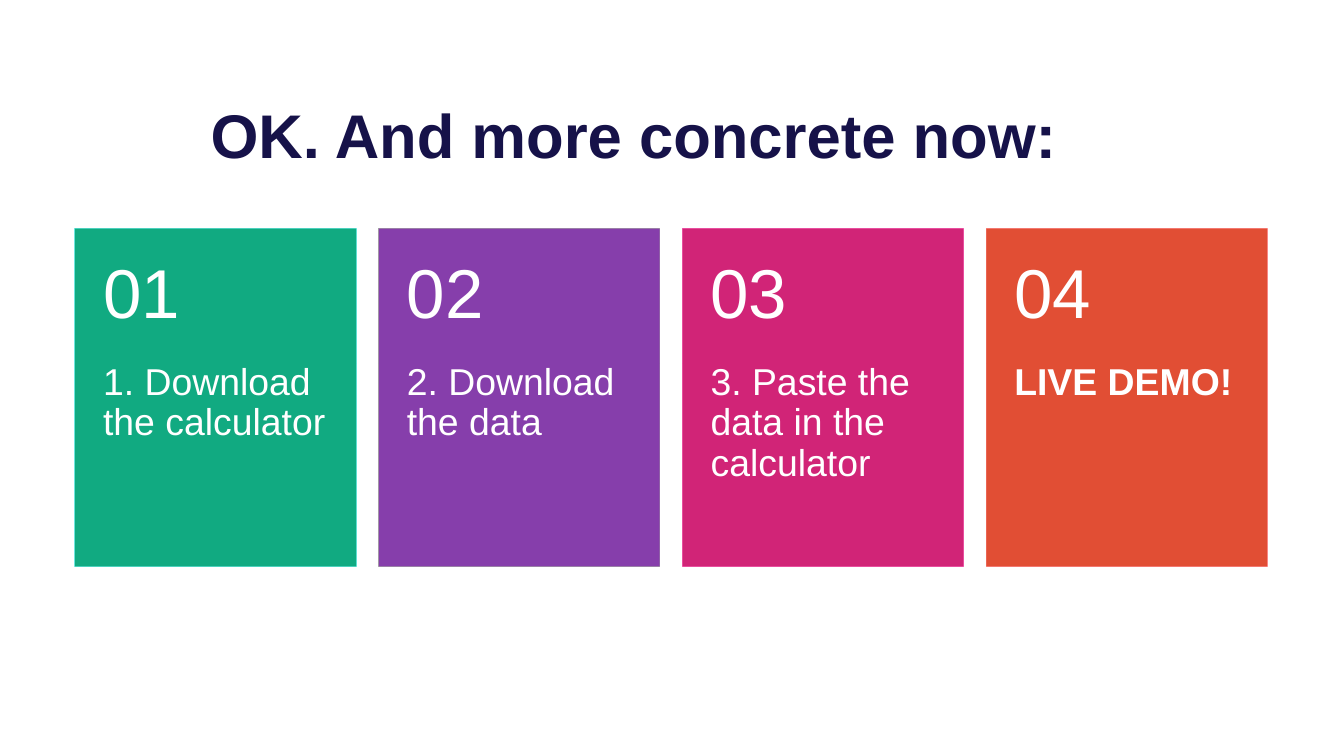
import pptx
import pptx.dml.color
import pptx.enum.shapes
import pptx.enum.text
import pptx.util

Cm = pptx.util.Cm
ANCHOR = pptx.enum.text.MSO_ANCHOR
COLORS = {
    "navy": "161249", "white": "FFFFFF",
    "green": "11AA81", "green edge": "6BE7DE",
    "purple": "863EAB", "purple edge": "A5A5A5",
    "pink": "D12477", "pink edge": "F666B4",
    "orange": "E14E34", "orange edge": "FD9091",
}
STEPS = [
    ("1. Download the calculator", "green"),
    ("2. Download the data", "purple"),
    ("3. Paste the data in the calculator", "pink"),
    ("LIVE DEMO!", "orange"),
]
LEFT, TOP, WIDTH, PITCH = 1.42, 4.32, 5.31, 5.74
NUMBER_HEIGHT, LABEL_HEIGHT = 2.54, 3.84


def add_rectangle(left, top, height, color):
    box = page.shapes.add_shape(
        pptx.enum.shapes.MSO_SHAPE.RECTANGLE, Cm(left), Cm(top), Cm(WIDTH), Cm(height))
    box.shadow.inherit = False
    box.fill.solid()
    box.fill.fore_color.rgb = pptx.dml.color.RGBColor.from_string(COLORS[color])
    box.line.fill.background()
    return box


def write_text(box, text, size, color, bold, anchor, insets):
    """Fill the box with one left-aligned paragraph; insets are side, top, bottom in cm."""
    frame = box.text_frame
    frame.text = text
    frame.word_wrap = True
    frame.vertical_anchor = anchor
    side, top, bottom = insets
    frame.margin_left = frame.margin_right = Cm(side)
    frame.margin_top, frame.margin_bottom = Cm(top), Cm(bottom)
    para = frame.paragraphs[0]
    para.alignment = pptx.enum.text.PP_ALIGN.LEFT
    para.line_spacing = 0.9
    span = para.runs[0]
    span.font.name = "Arial"
    span.font.size = pptx.util.Pt(size)
    span.font.bold = bold
    span.font.color.rgb = pptx.dml.color.RGBColor.from_string(COLORS[color])


deck = pptx.Presentation()
deck.slide_width, deck.slide_height = Cm(25.4), Cm(14.28)
page = deck.slides.add_slide(deck.slide_layouts[6])

title = page.shapes.add_textbox(Cm(3.73), Cm(1.68), Cm(17.93), Cm(1.88))
write_text(title, "OK. And more concrete now:", 33, "navy", True,
           ANCHOR.MIDDLE, (0.25, 0.13, 0.13))

for index, (text, color) in enumerate(STEPS):
    left = LEFT + index * PITCH

    card = add_rectangle(left, TOP, NUMBER_HEIGHT + LABEL_HEIGHT, f"{color} edge")
    card.line.color.rgb = pptx.dml.color.RGBColor.from_string(COLORS[f"{color} edge"])
    card.line.width = pptx.util.Pt(0.75)

    label = add_rectangle(left, TOP + NUMBER_HEIGHT, LABEL_HEIGHT, color)
    write_text(label, text, 20, "white", color == "orange", ANCHOR.TOP, (0.53, 0, 0.91))

    number = add_rectangle(left, TOP, NUMBER_HEIGHT, color)
    write_text(number, f"{index + 1:02}", 37, "white", False,
               ANCHOR.MIDDLE, (0.53, 0.46, 0.46))

deck.save("out.pptx")
